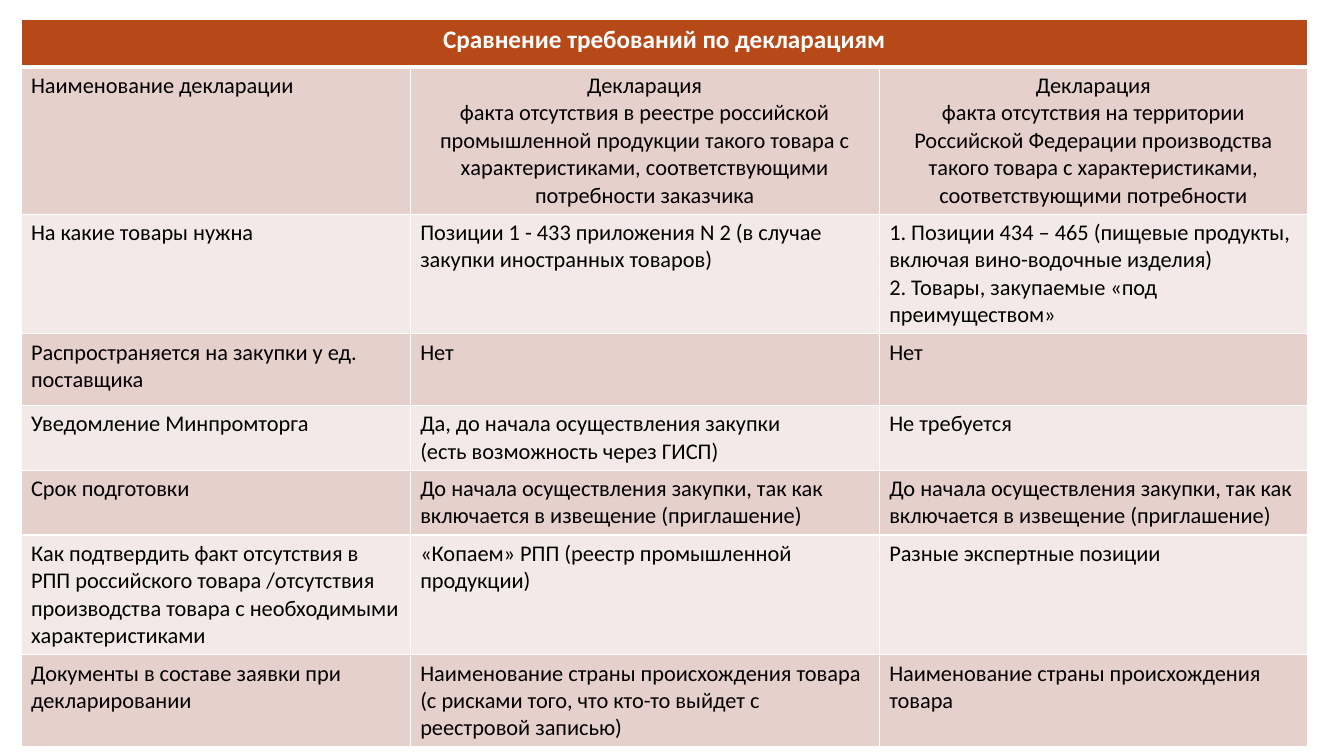
import pptx
import pptx.util
import pptx.dml.color
import pptx.enum.text
from lxml import etree

Pt = pptx.util.Pt
CENTER = pptx.enum.text.PP_ALIGN.CENTER
COLORS = {"header": "B74919", "odd": "E6D0CC", "even": "F3E9E8",
          "border": "FFFFFF", "title": "FFFFFF", "text": "000000"}
FONT = "Calibri"
COLUMN_WIDTHS = [278, 335, 306]
ROW_HEIGHTS = [34, 51, 64, 51, 40, 45, 64, 64]
TITLE = "Сравнение требований по декларациям"
ROWS = [
    ["Наименование декларации",
     "Декларация\vфакта отсутствия в реестре российской промышленной продукции такого товара "
     "с характеристиками, соответствующими потребности заказчика",
     "Декларация\nфакта отсутствия на территории Российской Федерации производства такого товара "
     "с характеристиками, соответствующими потребности"],
    ["На какие товары нужна",
     "Позиции 1 - 433 приложения N 2 (в случае закупки иностранных товаров)",
     "1. Позиции 434 – 465 (пищевые продукты, включая вино-водочные изделия)\n"
     "2. Товары, закупаемые «под преимуществом»"],
    ["Распространяется на закупки у ед. поставщика", "Нет", "Нет"],
    ["Уведомление Минпромторга",
     "Да, до начала осуществления закупки\n(есть возможность через ГИСП)",
     "Не требуется"],
    ["Срок подготовки"]
    + ["До начала осуществления закупки, так как включается в извещение (приглашение)"] * 2,
    ["Как подтвердить факт отсутствия в РПП российского товара /отсутствия производства "
     "товара с необходимыми характеристиками",
     "«Копаем» РПП (реестр промышленной продукции)",
     "Разные экспертные позиции"],
    ["Документы в составе заявки при декларировании",
     "Наименование страны происхождения товара (с рисками того, что кто-то выйдет "
     "с реестровой записью)",
     "Наименование страны происхождения товара"],
]


def rgb(name):
    return pptx.dml.color.RGBColor.from_string(COLORS[name])


def set_borders(cell, widths):
    """Draw the cell's borders; widths maps L, R, T, B to points."""
    tcPr = cell._tc.get_or_add_tcPr()
    ns = pptx.oxml.ns.qn
    for i, (side, width) in enumerate(widths.items()):
        ln = etree.Element(ns(f"a:ln{side}"), w=str(Pt(width)))
        fill = etree.SubElement(ln, ns("a:solidFill"))
        etree.SubElement(fill, ns("a:srgbClr"), val=COLORS["border"])
        tcPr.insert(i, ln)


def fill_cell(cell, text, fill, color="text", size=16, bold=False, align=None):
    cell.text_frame.text = text
    cell.fill.solid()
    cell.fill.fore_color.rgb = rgb(fill)
    for p in cell.text_frame.paragraphs:
        p.alignment = align
        for r in p.runs:
            r.font.name = FONT
            r.font.size = Pt(size)
            r.font.bold = bold
            r.font.color.rgb = rgb(color)


def add_comparison_table(s, left, top):
    frame = s.shapes.add_table(len(ROW_HEIGHTS), len(COLUMN_WIDTHS), Pt(left), Pt(top),
                               Pt(sum(COLUMN_WIDTHS)), Pt(sum(ROW_HEIGHTS)))
    table = frame.table
    for column, width in zip(table.columns, COLUMN_WIDTHS):
        column.width = Pt(width)
    for row, height in zip(table.rows, ROW_HEIGHTS):
        row.height = Pt(height)

    title = table.cell(0, 0)
    title.merge(table.cell(0, len(COLUMN_WIDTHS) - 1))
    fill_cell(title, TITLE, "header", "title", 18, True, CENTER)
    for i, texts in enumerate(ROWS, 1):
        for j, text in enumerate(texts):
            fill_cell(table.cell(i, j), text, "odd" if i % 2 else "even",
                      align=CENTER if i == 1 and j else None)

    for i, row in enumerate(table.rows):
        for cell in row.cells:
            set_borders(cell, {"L": 1, "R": 1, "T": 3 if i == 1 else 1, "B": 1 if i else 3})


def main():
    prs = pptx.Presentation()
    prs.slide_width, prs.slide_height = Pt(960), Pt(540)
    s = prs.slides.add_slide(prs.slide_layouts[6])
    add_comparison_table(s, 15, 14)
    prs.save("out.pptx")


if __name__ == "__main__":
    main()
